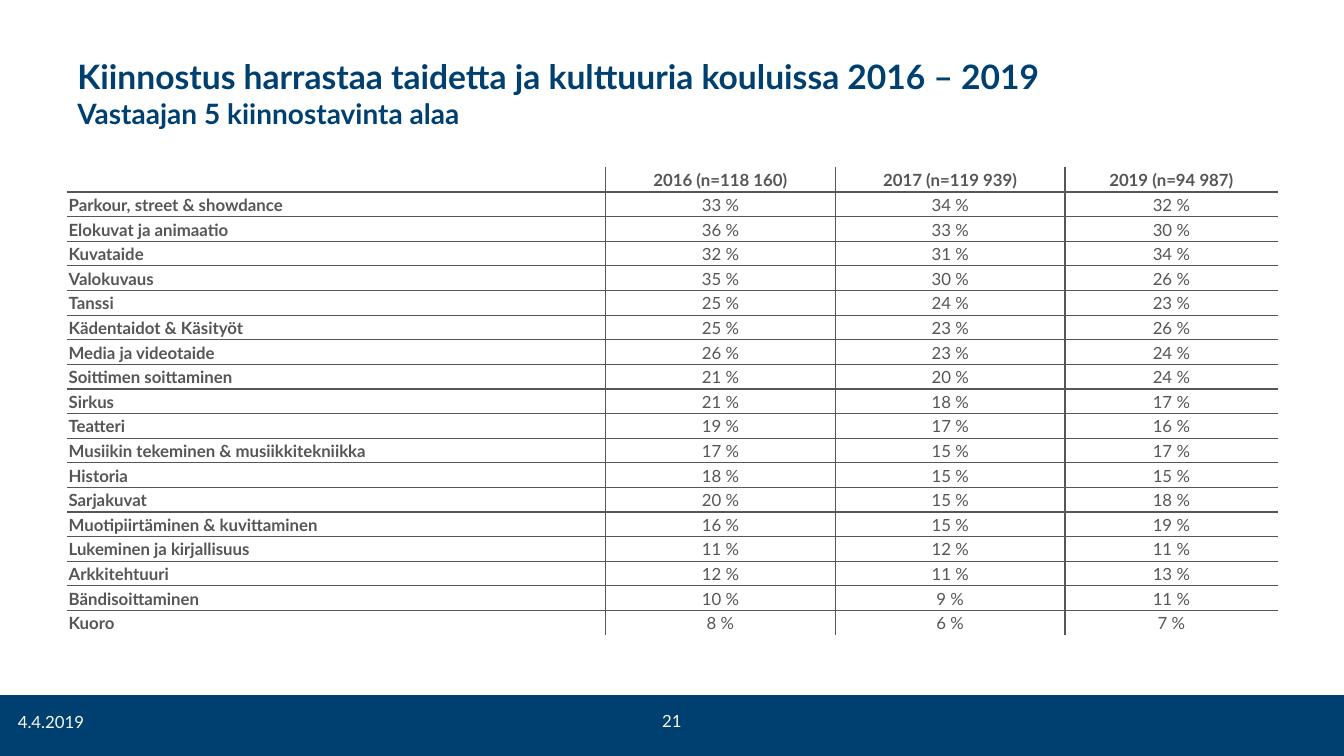
from pptx import Presentation, oxml
from pptx import util as u
from pptx.dml.color import RGBColor
from pptx.enum import shapes, text
from pptx.oxml.ns import nsdecls

NAVY = RGBColor(0x00, 0x40, 0x70)
GRAY = RGBColor(0x56, 0x56, 0x56)
CREAM = RGBColor(0xFB, 0xF8, 0xEB)
LEFT, MID = text.PP_ALIGN.LEFT, text.PP_ALIGN.CENTER

HEAD = ["", "2016 (n=118 160)", "2017 (n=119 939)", "2019 (n=94 987)"]
RATES = [
    ("Parkour, street & showdance", 33, 34, 32),
    ("Elokuvat ja animaatio", 36, 33, 30),
    ("Kuvataide", 32, 31, 34),
    ("Valokuvaus", 35, 30, 26),
    ("Tanssi", 25, 24, 23),
    ("Kädentaidot & Käsityöt", 25, 23, 26),
    ("Media ja videotaide", 26, 23, 24),
    ("Soittimen soittaminen", 21, 20, 24),
    ("Sirkus", 21, 18, 17),
    ("Teatteri", 19, 17, 16),
    ("Musiikin tekeminen & musiikkitekniikka", 17, 15, 17),
    ("Historia", 18, 15, 15),
    ("Sarjakuvat", 20, 15, 18),
    ("Muotipiirtäminen & kuvittaminen", 16, 15, 19),
    ("Lukeminen ja kirjallisuus", 11, 12, 11),
    ("Arkkitehtuuri", 12, 11, 13),
    ("Bändisoittaminen", 10, 9, 11),
    ("Kuoro", 8, 6, 7),
]


class Deck:
    """Hold the text style and the current slide, and draw each kind of element."""

    face = "Lato"
    inset = {"margin_left": u.Cm(0.03), "margin_right": u.Cm(0.03),
             "margin_top": u.Cm(0.03), "margin_bottom": 0,
             "vertical_anchor": text.MSO_ANCHOR.MIDDLE}

    def __init__(self, slide):
        self.slide = slide

    def style(self, font, color, size, bold=False):
        form = {"name": self.face, "size": u.Pt(size), "bold": bold}
        for key, val in form.items():
            setattr(font, key, val)
        font.color.rgb = color

    def bar(self, area, color):
        bar = self.slide.shapes.add_shape(
            shapes.MSO_SHAPE.RECTANGLE, *map(u.Cm, area))
        bar.shadow.inherit = False
        bar.fill.solid()
        bar.fill.fore_color.rgb = color
        bar.line.fill.background()

    def label(self, area, lines, color, bold=False, align=LEFT,
              anchor=text.MSO_ANCHOR.TOP):
        frame = self.slide.shapes.add_textbox(*map(u.Cm, area)).text_frame
        for key, val in {"word_wrap": True, "vertical_anchor": anchor}.items():
            setattr(frame, key, val)
        para = frame.paragraphs[0]
        para.alignment = align
        for num, (words, size) in enumerate(lines):
            if num:
                para.add_line_break()
            run = para.add_run()
            run.text = words
            self.style(run.font, color, size, bold)

    def edge(self, cell, side, shown):
        fill = (f'<a:solidFill><a:srgbClr val="{GRAY}"/></a:solidFill>'
                if shown else "<a:noFill/>")
        cell._tc.get_or_add_tcPr().append(oxml.parse_xml(
            f'<a:ln{side} {nsdecls("a")} w="{u.Pt(1)}">{fill}</a:ln{side}>'))

    def table(self, left, top, widths, high, rows):
        count = len(rows)
        grid = self.slide.shapes.add_table(
            count, len(widths), u.Cm(left), u.Cm(top),
            u.Cm(sum(widths)), u.Cm(high * count)).table
        for key in ("first_row", "horz_banding"):
            setattr(grid, key, False)
        for col, wide in zip(grid.columns, widths):
            col.width = u.Cm(wide)
        for r, row in enumerate(rows):
            grid.rows[r].height = u.Cm(high)
            for c, words in enumerate(row):
                cell = grid.cell(r, c)
                inner = {"L": c > 0, "R": c < len(row) - 1,
                         "T": r > 0, "B": r < count - 1}
                for side, shown in inner.items():
                    self.edge(cell, side, shown)
                cell.fill.background()
                for key, val in self.inset.items():
                    setattr(cell, key, val)
                cell.text = words
                para = cell.text_frame.paragraphs[0]
                para.alignment = MID if c else LEFT
                font = para.runs[0].font if words else para.font
                self.style(font, GRAY, 12, r == 0 or c == 0)


def main():
    show = Presentation()
    show.slide_width, show.slide_height = u.Cm(33.87), u.Cm(19.05)
    deck = Deck(show.slides.add_slide(show.slide_layouts[6]))
    deck.bar((0, 17.52, 33.87, 1.53), NAVY)
    deck.label((1.7, 0.76, 26.6, 3.18),
               [("Kiinnostus harrastaa taidetta ja kulttuuria kouluissa 2016 – 2019", 24),
                ("Vastaajan 5 kiinnostavinta alaa", 20)],
               NAVY, bold=True, anchor=text.MSO_ANCHOR.MIDDLE)
    body = [[name] + [f"{rate} %" for rate in rates] for name, *rates in RATES]
    deck.table(1.7, 4.22, (13.56, 5.79, 5.79, 5.36), 0.62, [HEAD] + body)
    deck.label((12.98, 17.78, 7.9, 1.02), [("21", 12)], CREAM, align=MID)
    deck.label((0.2, 17.81, 7.9, 1.02), [("4.4.2019", 12)], CREAM)
    show.save("out.pptx")


if __name__ == "__main__":
    main()
